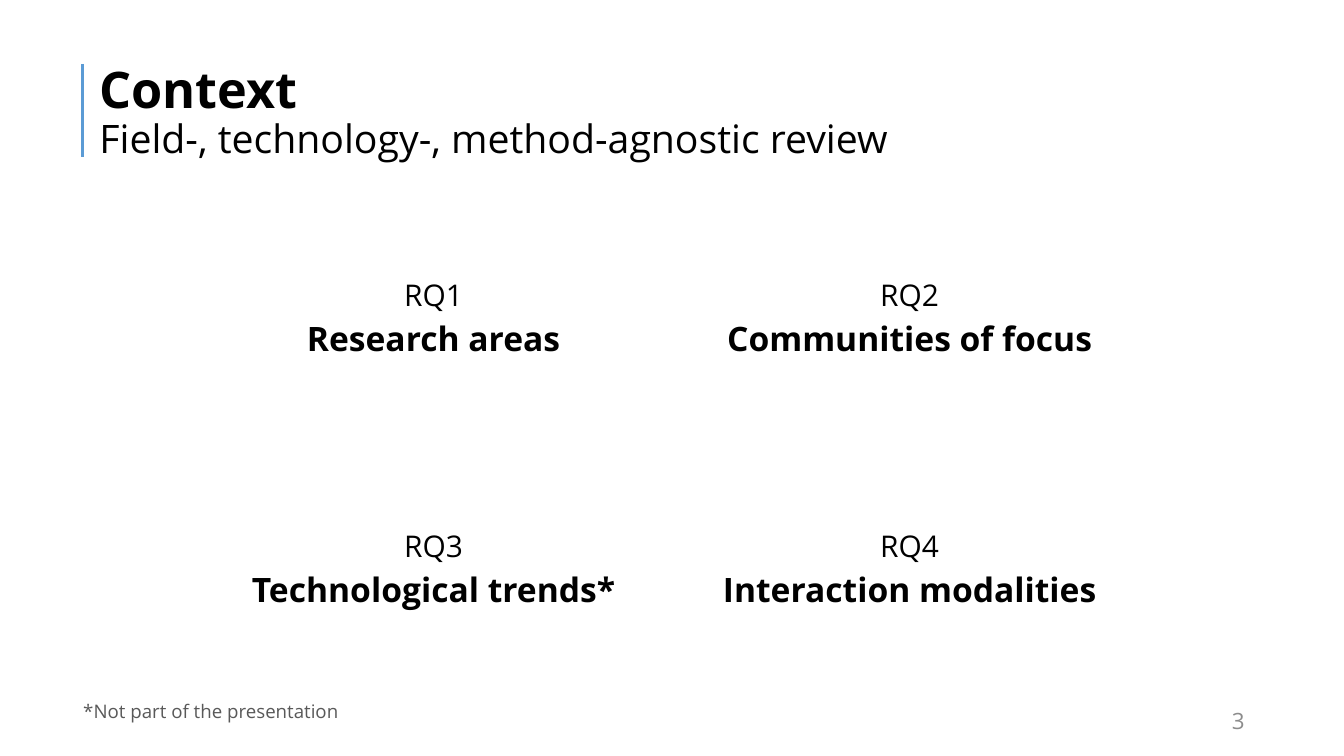
from pptx import Presentation
from pptx.dml.color import RGBColor
from pptx.enum.shapes import MSO_CONNECTOR as Line
from pptx.enum.text import MSO_ANCHOR as Anchor, MSO_AUTO_SIZE as Fit, PP_ALIGN as Align
from pptx.oxml.ns import qn
from pptx.util import Inches, Pt
from lxml import etree

FONT = "Open Sans"
COLORS = {"text": "000000", "note": "595959", "number": "8C8C8C", "bar": "5B9BD5"}
TOPICS = [
    ["Research areas", "Communities of focus"],
    ["Technological trends*", "Interaction modalities"],
]


def color(name):
    return RGBColor.from_string(COLORS[name])


def box(*sides):
    return [Inches(side) for side in sides]


class Deck:
    def __init__(self, slide):
        self.slide = slide

    def run(self, para, text, size, bold=False, tone="text"):
        run = para.add_run()
        run.text = text
        font = run.font
        font.name, font.size, font.bold = FONT, Pt(size), bold
        font.color.rgb = color(tone)

    def title(self, head, sub, *sides):
        shape = self.slide.shapes.title
        shape.left, shape.top, shape.width, shape.height = box(*sides)
        frame = shape.text_frame
        frame.word_wrap, frame.auto_size = True, Fit.NONE
        frame.vertical_anchor = Anchor.MIDDLE
        para = frame.paragraphs[0]
        para.alignment, para.line_spacing = Align.LEFT, 0.9
        self.run(para, head, 54, bold=True)
        para.add_line_break()
        self.run(para, sub, 42)

    def bar(self, x, top, end):
        line = self.slide.shapes.add_connector(Line.STRAIGHT, *box(x, top, x, end))
        line.line.color.rgb = color("bar")
        line.line.width = Pt(3)
        etree.SubElement(line._element.spPr, qn("a:effectLst"))

    def text(self, words, size, tone, *sides, align=Align.LEFT, anchor=Anchor.TOP):
        frame = self.slide.shapes.add_textbox(*box(*sides)).text_frame
        frame.word_wrap, frame.vertical_anchor = True, anchor
        para = frame.paragraphs[0]
        para.alignment = align
        self.run(para, words, size, tone=tone)

    def grid(self, rows, *sides):
        """Table of numbered research questions, without fills or banding."""
        cols = len(rows[0])
        table = self.slide.shapes.add_table(len(rows), cols, *box(*sides)).table
        table.first_row = table.horz_banding = False
        for r, row in enumerate(rows):
            for c, topic in enumerate(row):
                cell = table.cell(r, c)
                cell.fill.background()
                cell.vertical_anchor = Anchor.MIDDLE
                label, name = cell.text_frame.paragraphs[0], cell.text_frame.add_paragraph()
                label.alignment = name.alignment = Align.CENTER
                self.run(label, f"RQ{r * cols + c + 1}", 32)
                self.run(name, topic, 36, bold=True)


def main():
    prs = Presentation()
    prs.slide_width, prs.slide_height = box(20, 11.25)
    deck = Deck(prs.slides.add_slide(prs.slide_layouts[5]))
    deck.bar(1.23, 0.95, 2.33)
    deck.title("Context", "Field-, technology-, method-agnostic review", 1.38, 0.6, 17.25, 2.17)
    deck.text("3", 24, "number", 14.12, 10.43, 4.5, 0.6, align=Align.RIGHT, anchor=Anchor.MIDDLE)
    deck.grid(TOPICS, 2.91, 2.86, 14.17, 7.48)
    deck.text("*Not part of the presentation", 20, "note", 1.14, 10.36, 10, 0.44)
    prs.save("out.pptx")


if __name__ == "__main__":
    main()
